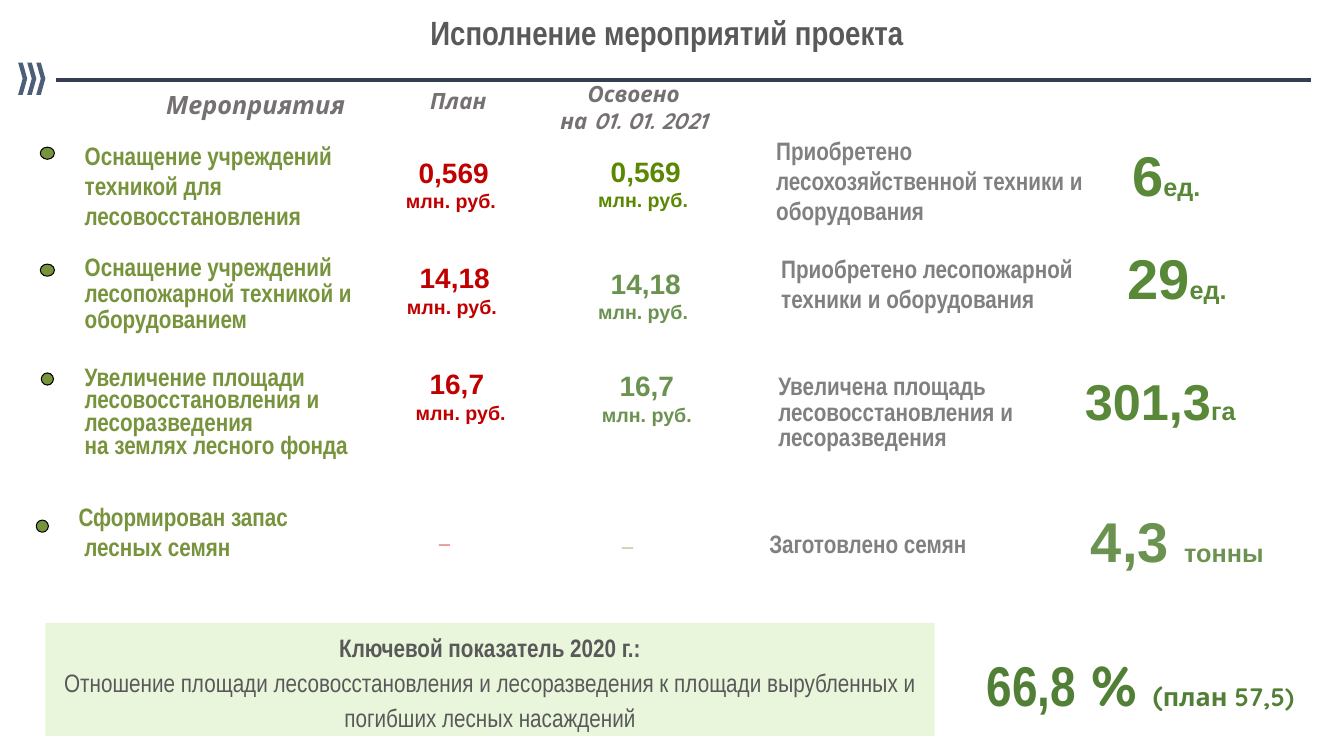
import pptx
import pptx.util
import pptx.dml.color
import pptx.enum.shapes
import pptx.enum.text
import pptx.oxml.ns
import lxml.etree

PX = 9144
NARROW, SANS, HEAD = "Arial Narrow", "Arial", "Quicksand"
GREY, NAVY, SLATE, ASH, SMOKE = "595959", "333F50", "4C5E78", "767171", "808080"
RED, OLIVE, LIME, MOSS, LEAF, PINE = "C00000", "77933C", "5B8803", "6B9250", "588838", "517F35"
MINT, BLACK = "E9F6DC", "000000"
SHAPE = pptx.enum.shapes.MSO_SHAPE
ALIGN = pptx.enum.text.PP_ALIGN
ANCHOR = pptx.enum.text.MSO_ANCHOR
GROW = pptx.enum.text.MSO_AUTO_SIZE.SHAPE_TO_FIT_TEXT
WIDE, SLIM, TIGHT = (10, 5, 10, 5), (7, 4, 7, 4), (4, 4, 4, 4)


def hue(code):
    return pptx.dml.color.RGBColor.from_string(code)


def write(frame, *paras, size=18, font=NARROW, color=GREY, bold=True, italic=False,
          center=False, middle=False, grow=True, pad=WIDE, lead=None):
    frame.word_wrap = True
    if grow:
        frame.auto_size = GROW
    frame.vertical_anchor = ANCHOR.MIDDLE if middle else ANCHOR.TOP
    frame.margin_left, frame.margin_top, frame.margin_right, frame.margin_bottom = [
        side * PX for side in pad]
    for spot, runs in enumerate(paras):
        para = frame.add_paragraph() if spot else frame.paragraphs[0]
        para.alignment = ALIGN.CENTER if center else ALIGN.LEFT
        if lead:
            para.line_spacing = lead
        for item in [runs] if isinstance(runs, str) else runs:
            text, own = (item, {}) if isinstance(item, str) else item
            run = para.add_run()
            run.text = text
            run.font.size = pptx.util.Pt(own.get("size", size))
            run.font.name = own.get("font", font)
            run.font.bold = own.get("bold", bold)
            run.font.italic = italic
            run.font.color.rgb = hue(color)


class Board:
    def __init__(self, deck):
        self.slide = deck.slides.add_slide(deck.slide_layouts[6])
        self.shapes = self.slide.shapes

    def text(self, box, *paras, **style):
        item = self.shapes.add_textbox(*[side * PX for side in box])
        write(item.text_frame, *paras, **style)

    def shape(self, kind, box, fill, edge=None):
        item = self.shapes.add_shape(kind, *[side * PX for side in box])
        item.shadow.inherit = False
        item.fill.solid()
        item.fill.fore_color.rgb = hue(fill)
        if edge:
            item.line.color.rgb = hue(edge)
            item.line.width = pptx.util.Pt(0.75)
        else:
            item.line.fill.background()
        return item

    def line(self, start, end, color, width):
        item = self.shapes.add_connector(
            pptx.enum.shapes.MSO_CONNECTOR.STRAIGHT, *[spot * PX for spot in start + end])
        item.line.color.rgb = hue(color)
        item.line.width = pptx.util.Pt(width)
        lxml.etree.SubElement(item._element.spPr, pptx.oxml.ns.qn("a:effectLst"))

    def cost(self, box, sum, unit, color):
        self.text(box, sum, [(unit, {"size": 14})], size=20, font=SANS, color=color, center=True)

    def dash(self, box, color):
        self.text(box, "_", size=14, font=SANS, color=color, center=True)

    def total(self, box, sum, unit, size=40, color=LEAF):
        self.text(box, [sum, (unit, {"size": 18})], size=size, font=SANS, color=color, pad=TIGHT)


def main():
    deck = pptx.Presentation()
    deck.slide_width, deck.slide_height = 1333 * PX, 750 * PX
    board = Board(deck)

    board.line((56, 79), (1300, 79), NAVY, 2.75)
    board.text((85, 0, 1153, 63), "Исполнение мероприятий проекта",
               size=24, center=True, middle=True, grow=False)
    for step in range(3):
        board.shape(SHAPE.CHEVRON, (18 + 9 * step, 62, 9, 32), SLATE)

    heads = [
        ((76, 84, 362, 40), 18, ["Мероприятия "]),
        ((411, 82, 87, 37), 16, ["План"]),
        ((537, 75, 183, 64), 16, ["Освоено", "на 01. 01. 2021"]),
    ]
    for box, size, paras in heads:
        board.text(box, *paras, size=size, font=HEAD, color=ASH, italic=True, center=True)

    tasks = [
        ((77, 135, 292, 98), None, ["Оснащение учреждений техникой для лесовосстановления"]),
        ((77, 250, 292, 85), 0.85, ["Оснащение учреждений лесопожарной техникой и оборудованием"]),
        ((77, 361, 293, 98), 0.75, ["Увеличение площади лесовосстановления и лесоразведения",
                                    "на землях лесного фонда"]),
        ((71, 493, 290, 68), None, ["Сформирован запас", " лесных семян"]),
    ]
    for box, lead, paras in tasks:
        board.text(box, *paras, color=OLIVE, pad=SLIM, lead=lead)

    for dot in [(40, 146, 14, 12), (40, 262, 14, 12), (41, 370, 12, 12), (36, 516, 12, 12)]:
        board.shape(SHAPE.OVAL, dot, OLIVE, BLACK)

    costs = [
        ((391, 149, 118, 67), "0,569", "млн. руб. ", RED),
        ((392, 254, 118, 67), "14,18", "млн. руб. ", RED),
        ((398, 359, 118, 67), "16,7 ", "млн. руб.", RED),
        ((536, 148, 209, 67), "0,569", "млн. руб. ", LIME),
        ((536, 259, 209, 67), "14,18", "млн. руб. ", MOSS),
        ((564, 361, 155, 67), "16,7", "млн. руб.", MOSS),
    ]
    for cost in costs:
        board.cost(*cost)
    board.dash((386, 515, 110, 34), RED)
    board.dash((562, 518, 121, 41), OLIVE)

    results = [
        ((760, 129, 326, 101), "Приобретено лесохозяйственной техники и оборудования", WIDE, None),
        ((765, 246, 333, 101), "Приобретено лесопожарной техники и оборудования", WIDE, None),
        ((765, 368, 287, 85), "Увеличена площадь лесовосстановления и лесоразведения", SLIM, 0.85),
        ((756, 520, 249, 38), "Заготовлено семян", SLIM, None),
    ]
    for box, text, pad, lead in results:
        board.text(box, text, color=SMOKE, pad=pad, lead=lead)

    board.total((1119, 135, 125, 75), "6", "ед.")
    board.total((1114, 238, 125, 75), "29", "ед.")
    board.total((1072, 363, 169, 69), "301,3", "га", size=36)
    board.total((1078, 498, 194, 75), "4,3 ", "тонны", color=MOSS)

    lead = pptx.util.Pt(25)
    panel = board.shape(SHAPE.RECTANGLE, (45, 618, 882, 112), MINT)
    write(panel.text_frame, "Ключевой показатель 2020 г.:",
          [("Отношение площади лесовосстановления и лесоразведения "
            "к площади вырубленных и погибших лесных насаждений", {"bold": False})],
          center=True, lead=lead)
    board.text((962, 637, 338, 80),
               ["66,8", (" % ", {"font": HEAD}), ("(", {"font": HEAD, "size": 20}),
                ("план 57,5)", {"font": HEAD, "size": 18})],
               size=40, color=PINE, center=True, pad=(10, 40, 10, 5), lead=lead)

    deck.save("out.pptx")


if __name__ == "__main__":
    main()
